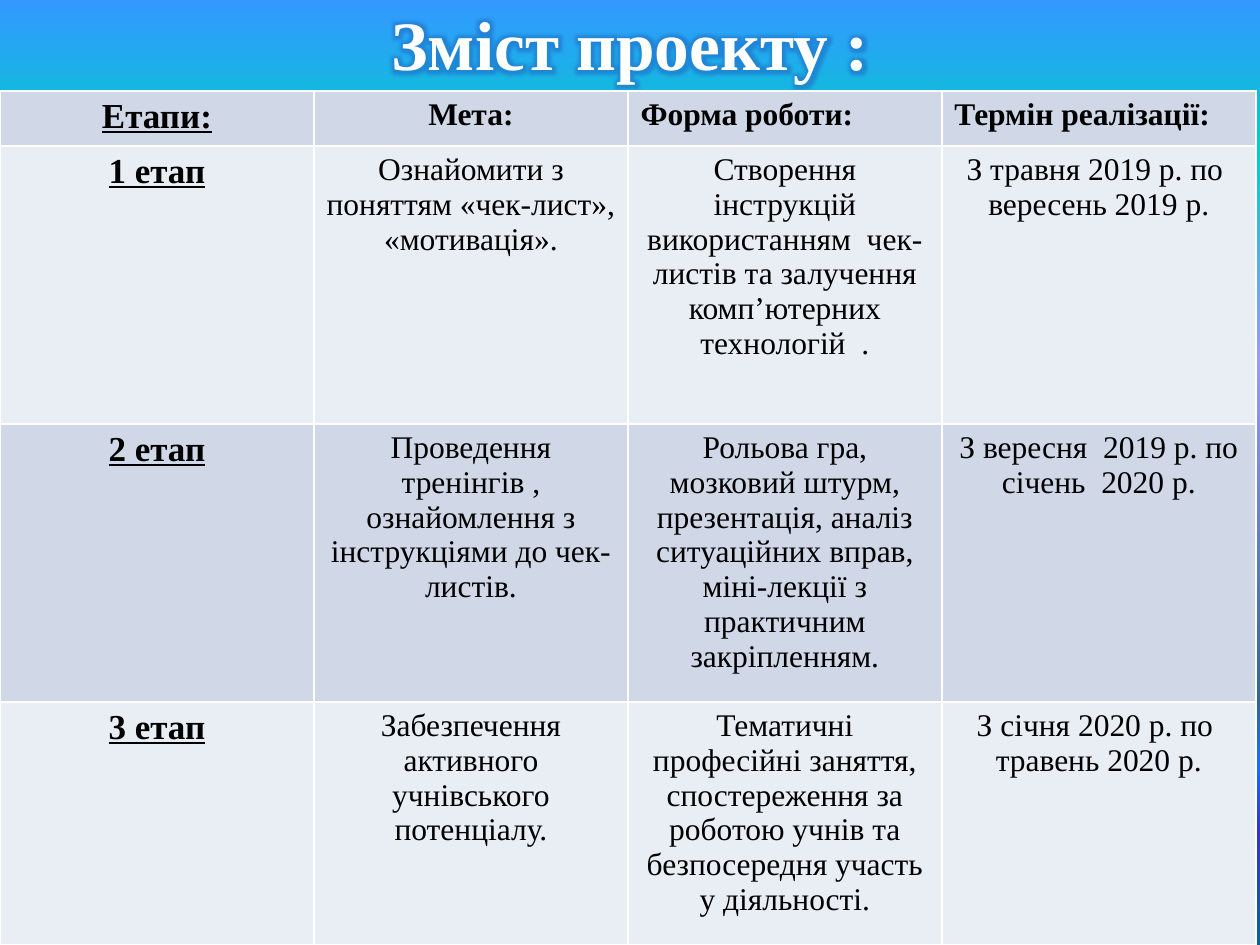
import pptx
import pptx.util
import pptx.dml.color
import pptx.enum.text
import pptx.oxml
import pptx.oxml.ns

SCALE = 914400 / 126
FONT = "Times New Roman"
HUES = {"white": "FFFFFF", "black": "000000", "glow": "1F6FC8",
        "dark": "D0D8E8", "light": "E9EDF4"}
STOPS = [(0, "3399FF"), (16, "00CCCC"), (38, "9999FF"), (74, "2E6792"),
         (81, "1170FF"), (88, "3333CC"), (100, "006699")]
ALIGN = pptx.enum.text.PP_ALIGN
HEAD = {"size": 18, "bold": True, "underline": False}
STAGE = {"size": 20, "bold": True, "underline": True}
BODY = {"size": 18, "bold": False, "underline": False}
ROWS = [
    ["Етапи:", "Мета:", "Форма роботи:", "Термін реалізації:"],
    ["1 етап", "Ознайомити з поняттям «чек-лист», «мотивація».",
     "Створення інструкцій використанням  чек-листів та залучення комп’ютерних технологій  .",
     "З травня 2019 р. по  вересень 2019 р."],
    ["2 етап",
     "Проведення тренінгів , ознайомлення з інструкціями до чек-листів.",
     "Рольова гра, мозковий штурм, презентація, аналіз ситуаційних вправ, "
     "міні-лекції з практичним закріпленням.",
     "З вересня  2019 р. по січень  2020 р."],
    ["3 етап", "Забезпечення активного учнівського потенціалу.",
     "Тематичні професійні заняття, спостереження за роботою учнів та "
     "безпосередня участь у діяльності.",
     "З січня 2020 р. по  травень 2020 р."],
]


def px(num):
    return pptx.util.Emu(round(num * SCALE))


def node(tag, body="", attrs=""):
    space = pptx.oxml.ns.nsdecls("a")
    return pptx.oxml.parse_xml(f"<a:{tag} {space} {attrs}>{body}</a:{tag}>")


def tint(hue):
    return f'<a:srgbClr val="{hue}"/>'


class Deck:
    def __init__(self, wide, high):
        self.file = pptx.Presentation()
        self.file.slide_width, self.file.slide_height = px(wide), px(high)
        self.slide = self.file.slides.add_slide(self.file.slide_layouts[5])

    def back(self, stops):
        fill = self.slide.background.fill
        fill.gradient()
        fill.gradient_angle = 270
        grad = self.slide.background._cSld.find(".//" + pptx.oxml.ns.qn("a:gradFill"))
        marks = "".join(f'<a:gs pos="{pos * 1000}">{tint(hue)}</a:gs>'
                        for pos, hue in stops)
        grad.replace(grad.find(pptx.oxml.ns.qn("a:gsLst")), node("gsLst", marks))

    def text(self, frame, words, hue, look, align):
        para = frame.paragraphs[0]
        para.alignment = align
        run = para.add_run()
        run.text = words
        for key, val in look.items():
            setattr(run.font, key, pptx.util.Pt(val) if key == "size" else val)
        run.font.color.rgb = pptx.dml.color.RGBColor.from_string(HUES[hue])
        run.font.name = FONT
        return run

    def title(self, words, box, look):
        shape = self.slide.shapes.title
        for key, val in zip(("left", "top", "width", "height"), box):
            setattr(shape, key, px(val))
        frame = shape.text_frame
        frame.auto_size = pptx.enum.text.MSO_AUTO_SIZE.NONE
        frame.vertical_anchor = pptx.enum.text.MSO_ANCHOR.MIDDLE
        run = self.text(frame, words, "white", look, ALIGN.CENTER)
        glow = f'<a:glow rad="101600"><a:srgbClr val="{HUES["glow"]}">' \
               '<a:alpha val="60000"/></a:srgbClr></a:glow>'
        run._r.get_or_add_rPr().insert(1, node("effectLst", glow))

    def edge(self, cell):
        props = cell._tc.get_or_add_tcPr()
        line = f"<a:solidFill>{tint(HUES['white'])}</a:solidFill>"
        for spot, side in enumerate("LRTB"):
            props.insert(spot, node("ln" + side, line, 'w="12700"'))

    def table(self, rows, left, top, wide, highs):
        count = len(rows[0])
        grid = self.slide.shapes.add_table(
            len(rows), count, px(left), px(top), px(wide * count), px(sum(highs))).table
        for col in grid.columns:
            col.width = px(wide)
        for y, (texts, high) in enumerate(zip(rows, highs)):
            grid.rows[y].height = px(high)
            for x, words in enumerate(texts):
                cell = grid.cell(y, x)
                cell.fill.solid()
                band = HUES["light" if y % 2 else "dark"]
                cell.fill.fore_color.rgb = pptx.dml.color.RGBColor.from_string(band)
                self.edge(cell)
                look = STAGE if x == 0 else BODY if y else HEAD
                align = ALIGN.LEFT if y == 0 and x > 1 else ALIGN.CENTER
                self.text(cell.text_frame, words, "black", look, align)


def main():
    deck = Deck(1260, 945)
    deck.back(STOPS)
    deck.title("Зміст проекту :", (63, 0, 1134, 86), {"size": 39.6, "bold": True})
    deck.table(ROWS, 0, 91, 314, (55, 278, 278, 243))
    deck.file.save("out.pptx")


if __name__ == "__main__":
    main()
